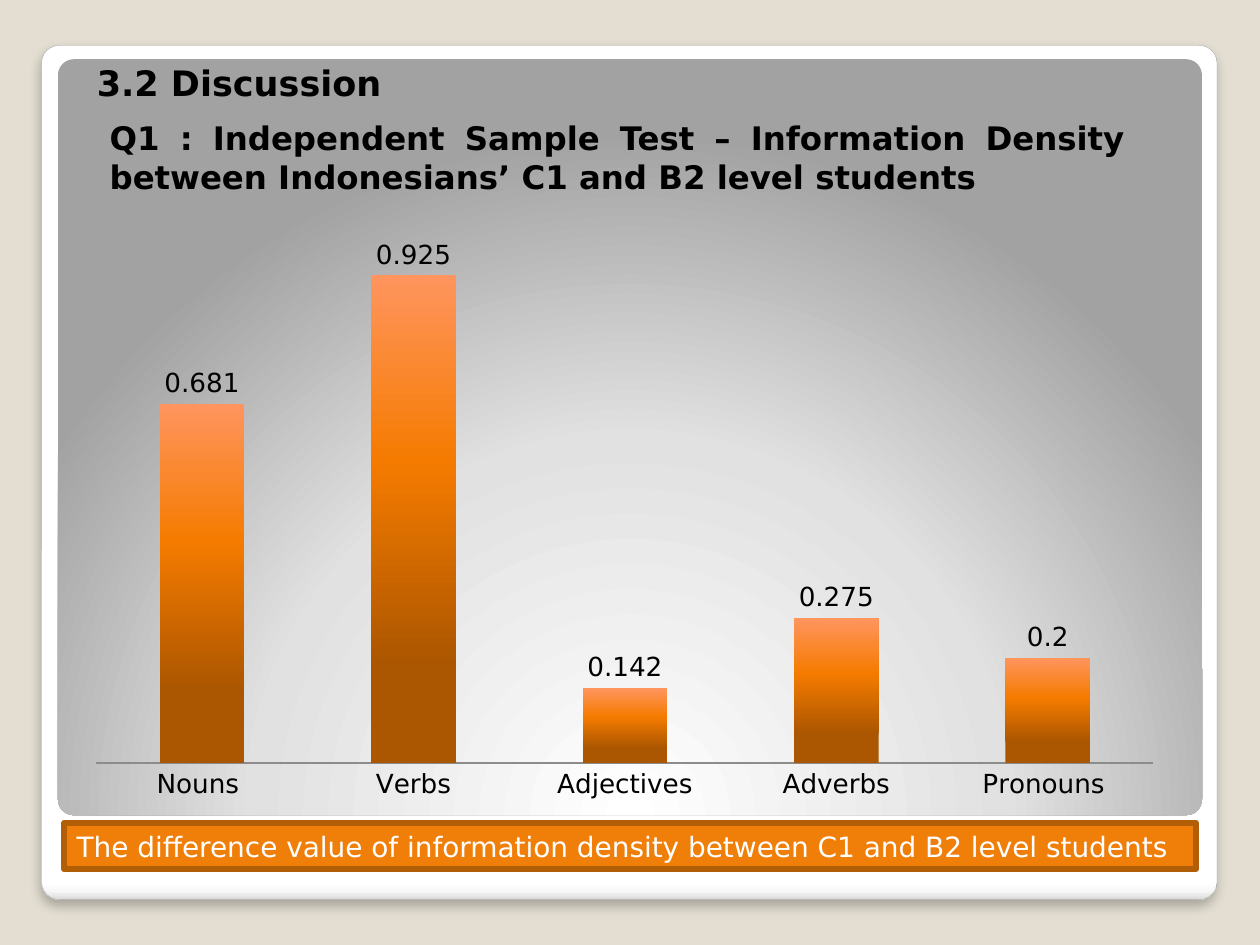
import pptx
import pptx.util
import pptx.chart.data
import pptx.dml.color
import pptx.enum.chart
import pptx.enum.shapes
import pptx.enum.text
import pptx.oxml
import pptx.oxml.ns

Inches, Pt = pptx.util.Inches, pptx.util.Pt
SHAPE = pptx.enum.shapes.MSO_SHAPE
ALIGN = pptx.enum.text.PP_ALIGN
ANCHOR = pptx.enum.text.MSO_ANCHOR
qn = pptx.oxml.ns.qn
FONT = "DejaVu Sans"
COLORS = {
    "background": "E3DED1", "white": "FFFFFF", "black": "000000",
    "edge": "A4A4A4", "near_white": "F7F7F7", "rim": "DADADA",
    "panel_mid": "E1E1E1", "panel_dark": "A2A2A2",
    "orange": "F07F09", "orange_line": "B25E07", "axis": "8C8C8C",
    "bar_low": "AB5600", "bar_mid": "F57B00", "bar_top": "FF955E",
}
DIRECTION = '<a:lin ang="{}" scaled="0"/>'
GLOW = '<a:path path="circle"><a:fillToRect l="50000" t="175000" r="50000" b="-75000"/></a:path>'


def rgb(name):
    """Return the named colour."""
    return pptx.dml.color.RGBColor.from_string(COLORS[name])


def add_xml(parent, xml):
    """Append one drawing element written as XML."""
    head, tail = xml.split(" ", 1)
    ns = pptx.oxml.ns.nsdecls("a", "c")
    parent.append(pptx.oxml.parse_xml(f"{head} {ns} {tail}"))


def set_gradient(fill, element, stops, direction):
    """Fill with colour stops given as (percent, colour name)."""
    fill.gradient()
    grad = element.find(".//" + qn("a:gradFill"))
    grad.clear()
    marks = "".join(
        f'<a:gs pos="{pos * 1000}"><a:srgbClr val="{COLORS[name]}"/></a:gs>'
        for pos, name in stops)
    add_xml(grad, f"<a:gsLst >{marks}</a:gsLst>")
    add_xml(grad, direction)


def add_panel(s, box, stops, direction):
    """Add a rounded panel with a gradient."""
    sp = s.shapes.add_shape(SHAPE.ROUNDED_RECTANGLE, *map(Inches, box))
    sp.adjustments[0] = 0.021
    sp.shadow.inherit = False
    sp.line.fill.background()
    set_gradient(sp.fill, sp._element, stops, direction)
    return sp


def add_frame(s, box):
    """Add the white card and the grey panel inside it."""
    x, y, w, h = box
    card = add_panel(s, box, [(0, "white"), (98, "white"), (99, "near_white"), (100, "rim")],
                     DIRECTION.format(5400000))
    card.line.color.rgb = rgb("edge")
    card.line.width = Pt(0.16)
    effects = card._element.spPr.find(qn("a:effectLst"))
    add_xml(effects, f'<a:outerShdw blurRad="{Pt(6)}" dist="{Pt(4)}" dir="5400000" rotWithShape="0">'
                     f'<a:srgbClr val="{COLORS["black"]}"><a:alpha val="25000"/></a:srgbClr></a:outerShdw>')
    add_panel(s, (x + 0.13, y + 0.11, w - 0.25, h - 0.78),
              [(0, "white"), (55, "panel_mid"), (100, "panel_dark")], GLOW)


def write(sp, text, size, color, bold=False, align=ALIGN.LEFT, wrap=True):
    """Write one paragraph into a shape."""
    tf = sp.text_frame
    tf.word_wrap = wrap
    p = tf.paragraphs[0]
    p.alignment = align
    r = p.add_run()
    r.text = text
    r.font.name, r.font.size, r.font.bold = FONT, Pt(size), bold
    r.font.color.rgb = rgb(color)
    return tf


def add_headings(s, box):
    """Add the section title and the question below it."""
    x, y, w, h = box
    sp = s.shapes.add_textbox(*map(Inches, (x, y + 0.4, w, h - 0.4)))
    tf = write(sp, "Q1 : Independent Sample Test – Information Density between "
                   "Indonesians’ C1 and B2 level students", 18.5, "black", True, ALIGN.JUSTIFY)
    tf.margin_left, tf.margin_top = Inches(0.2), Inches(0.1)
    tf.paragraphs[0].space_before = Pt(2.5)
    sp = s.shapes.add_textbox(*map(Inches, (x, y, 2.76, 0.44)))
    write(sp, "3.2 Discussion", 20, "black", True)


def add_caption(s, box):
    """Add the orange caption bar."""
    sp = s.shapes.add_shape(SHAPE.RECTANGLE, *map(Inches, box))
    sp.shadow.inherit = False
    sp.fill.solid()
    sp.fill.fore_color.rgb = rgb("orange")
    sp.line.color.rgb = rgb("orange_line")
    sp.line.width = Pt(3.35)
    tf = write(sp, "The difference value of information density between C1 and B2 level students",
               16, "white", wrap=False)
    tf.vertical_anchor = ANCHOR.MIDDLE


def add_density_chart(s, box):
    """Add the column chart of density differences."""
    data = pptx.chart.data.CategoryChartData()
    data.categories = ["Nouns ", "Verbs", "Adjectives", "Adverbs", "Pronouns "]
    data.add_series("Series 1", (0.681, 0.925, 0.142, 0.275, 0.2))
    chart = s.shapes.add_chart(pptx.enum.chart.XL_CHART_TYPE.COLUMN_CLUSTERED,
                               *map(Inches, box), data).chart
    chart.has_legend = chart.has_title = False
    chart.font.name, chart.font.size = FONT, Pt(10)
    chart.font.color.rgb = rgb("black")
    axis = chart.value_axis
    axis.minimum_scale, axis.maximum_scale = 0, 1
    axis.has_major_gridlines = axis.visible = False
    axis = chart.category_axis
    axis.major_tick_mark = pptx.enum.chart.XL_TICK_MARK.NONE
    axis.tick_labels.font.size = Pt(15)
    axis.format.line.color.rgb = rgb("axis")
    plot = chart.plots[0]
    plot.gap_width, plot.vary_by_categories = 150, False
    series = plot.series[0]
    set_gradient(series.format.fill, series._element,
                 [(0, "bar_low"), (20, "bar_low"), (62, "bar_mid"), (100, "bar_top")],
                 DIRECTION.format(16200000))
    labels = series.data_labels
    labels.show_value = True
    labels.position = pptx.enum.chart.XL_LABEL_POSITION.OUTSIDE_END
    labels.font.size = Pt(15)
    area = chart._chartSpace.chart.plotArea
    for old in area.findall(qn("c:layout")):
        area.remove(old)
    sizes = "".join(f'<c:{k} val="{v}"/>' for k, v in
                    (("x", 0.02), ("y", 0.02), ("w", 0.96), ("h", 0.9)))
    add_xml(area, '<c:layout ><c:manualLayout><c:layoutTarget val="inner"/>'
                  f'<c:xMode val="edge"/><c:yMode val="edge"/>{sizes}</c:manualLayout></c:layout>')
    area.insert(0, area[-1])


def main():
    """Build the slide."""
    prs = pptx.Presentation()
    prs.slide_width, prs.slide_height = Inches(10), Inches(7.5)
    s = prs.slides.add_slide(prs.slide_layouts[6])
    s.background.fill.solid()
    s.background.fill.fore_color.rgb = rgb("background")
    add_frame(s, (0.33, 0.36, 9.33, 6.78))
    add_headings(s, (0.67, 0.44, 8.35, 1.42))
    add_caption(s, (0.51, 6.53, 8.98, 0.37))
    add_density_chart(s, (0.59, 1.78, 8.74, 4.65))
    prs.save("out.pptx")


if __name__ == "__main__":
    main()
